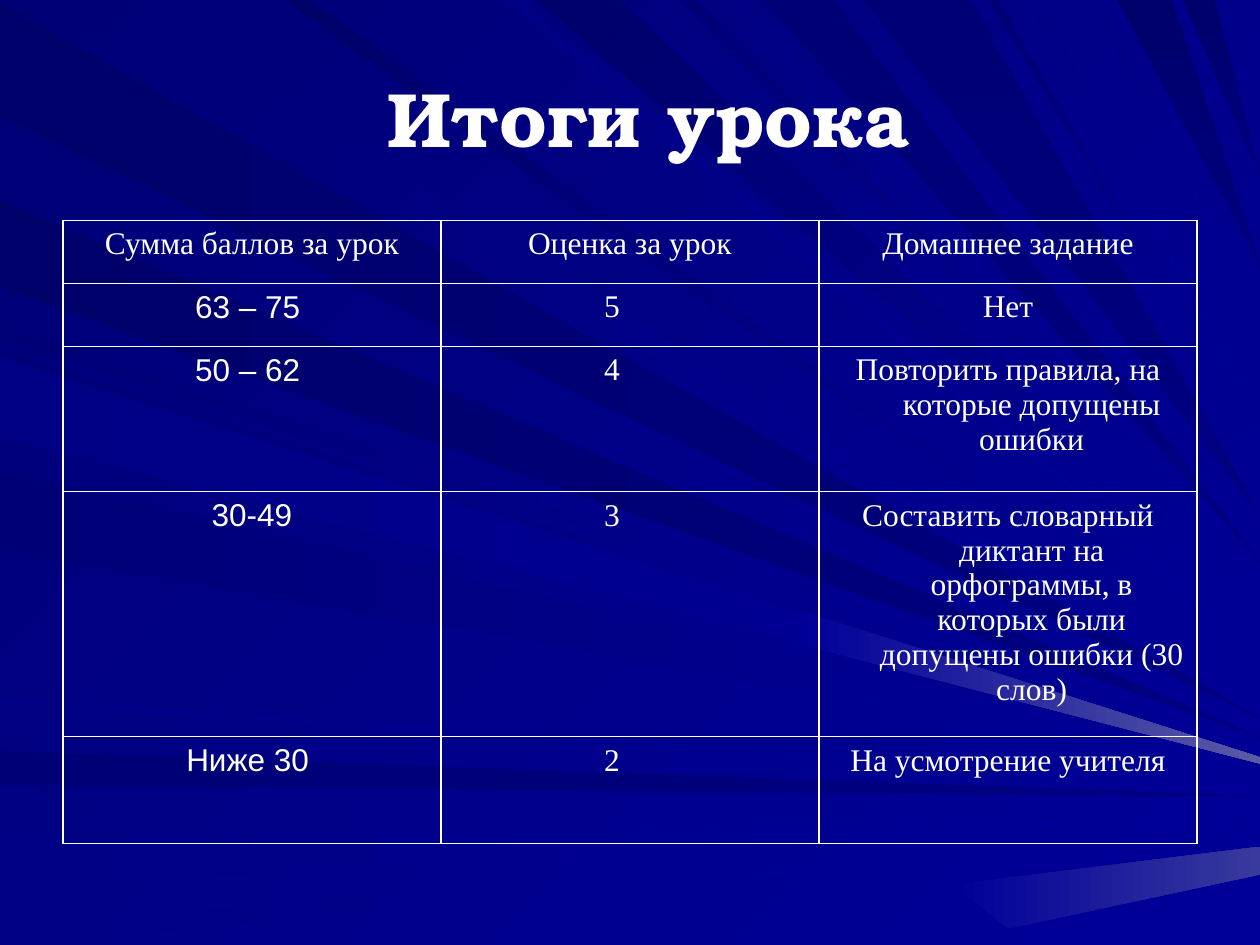
from lxml.etree import SubElement
from pptx import Presentation
from pptx.dml.color import RGBColor
from pptx.enum.text import MSO_ANCHOR, PP_ALIGN
from pptx.oxml.ns import qn
from pptx.util import Pt

COLORS = {
    "white": "FFFFFF",
    "deep": "00006B",
    "dark": "000076",
    "soft": "000085",
    "navy": "000080",
    "base": "000099",
    "haze": "5A5AA6",
    "mist": "39399E",
}
RAY_UNIT = Pt(0.72)
RIGHT_EDGE = 1000
RAYS = [
    ("left", "deep", "navy", 2, 93, 570),
    ("top", "dark", "base", 26, 101, 563),
    ("left", "dark", "navy", 596, 623, 632),
    ("left", "soft", "base", 665, 704, 648),
    ("left", "soft", "base", 735, 750, 662),
    ("left", "dark", "base", 258, 270, 589),
    ("left", "deep", "navy", 159, 228, 585),
    ("top", "soft", "base", 398, 416, 518),
    ("top", "deep", "base", 426, 492, 493),
    ("top", "dark", "base", 540, 552, 463),
    ("top", "dark", "navy", 606, 661, 446),
    ("top", "deep", "navy", 887, 930, 210),
    ("top", "deep", "navy", 939, 964, 140),
    ("left", "dark", "base", 278, 342, 600),
    ("left", "dark", "base", 374, 437, 606),
    ("left", "soft", "base", 552, 560, 622),
    ("top", "deep", "base", 225, 247, 550),
    ("top", "soft", "base", 577, 588, 454),
    ("top", "dark", "navy", 686, 770, 409),
    ("top", "dark", "base", 785, 792, 357),
    ("top", "soft", "base", 815, 824, 335),
    ("top", "soft", "base", 865, 872, 254),
    ("left", "soft", "base", 283, 347, 604),
]
GLOWS = [
    ("mist", [(1000, 694), (1000, 672), (756, 702), (800, 737)]),
    ("haze", [(1000, 601), (637, 485), (633, 511), (1000, 606)]),
]

ROW_HEIGHTS = [36, 36, 83, 140, 61]
COLUMN_WIDTH = 216
ROWS = [
    ("Сумма баллов за урок", "Оценка за урок", "Домашнее задание"),
    ("63 – 75 ", "5", "Нет"),
    ("50 – 62 ", "4", "Повторить правила, на которые допущены ошибки"),
    ("30-49", "3", "Составить словарный диктант на орфограммы, "
                   "в которых были допущены ошибки (30 слов)"),
    ("Ниже 30 ", "2", "На усмотрение учителя"),
]


def rgb(name):
    return RGBColor.from_string(COLORS[name])


def set_gradient(fill, start, end, angle):
    fill.gradient()
    fill.gradient_angle = (360 - angle) % 360
    for stop, name in zip(fill.gradient_stops, (start, end)):
        stop.color.rgb = rgb(name)


def style_text(p, font, size, bold=False):
    for r in p.runs:
        r.font.name = font
        r.font.size = Pt(size)
        r.font.bold = bold
        r.font.color.rgb = rgb("white")


def add_polygon(group, points, start, end, angle):
    builder = group.shapes.build_freeform(*points[0], scale=RAY_UNIT)
    builder.add_line_segments(points[1:], close=True)
    sp = builder.convert_to_shape()
    sp.shadow.inherit = False
    sp.line.fill.background()
    set_gradient(sp.fill, start, end, angle)


def add_rays(s):
    group = s.shapes.add_group_shape()
    for edge, start, end, first, last, tip in RAYS:
        if edge == "left":
            points, angle = [(0, first), (0, last)], 0
        else:
            points, angle = [(first, 0), (last, 0)], 90 if end == "navy" else 45
        add_polygon(group, points + [(RIGHT_EDGE, tip)], start, end, angle)
    for end, points in GLOWS:
        add_polygon(group, points, "base", end, 0)
    s.shapes._spTree.insert(2, group._element)


def add_title(s, text):
    sp = s.shapes.title
    sp.left, sp.top, sp.width, sp.height = Pt(36), Pt(21.6), Pt(648), Pt(90)
    tf = sp.text_frame
    tf.text = text
    tf.margin_left = Pt(29)
    tf.vertical_anchor = MSO_ANCHOR.MIDDLE
    p = tf.paragraphs[0]
    p.alignment = PP_ALIGN.CENTER
    style_text(p, "TeX Gyre Bonum", 44, bold=True)


def add_borders(cell):
    tcPr = cell._tc.get_or_add_tcPr()
    for side in ("lnL", "lnR", "lnT", "lnB"):
        ln = SubElement(tcPr, qn(f"a:{side}"), w=str(Pt(1)))
        fill = SubElement(ln, qn("a:solidFill"))
        SubElement(fill, qn("a:srgbClr"), val=COLORS["white"])


def fill_cell(cell, text, font, is_mark):
    add_borders(cell)
    cell.fill.background()
    cell.text = text
    p = cell.text_frame.paragraphs[0]
    p.alignment = PP_ALIGN.LEFT if is_mark else PP_ALIGN.CENTER
    pPr = p._p.get_or_add_pPr()
    pPr.set("marL", str(Pt(86 if is_mark else 27)))
    pPr.set("indent", str(Pt(0 if is_mark else -27)))
    style_text(p, font, 18)


def add_results_table(s):
    columns = len(ROWS[0])
    frame = s.shapes.add_table(len(ROWS), columns, Pt(36), Pt(126),
                               Pt(COLUMN_WIDTH * columns), Pt(sum(ROW_HEIGHTS)))
    table = frame.table
    table.first_row = False
    table.horz_banding = False
    for row, height in zip(table.rows, ROW_HEIGHTS):
        row.height = Pt(height)
    for i, texts in enumerate(ROWS):
        for j, text in enumerate(texts):
            font = "Arial" if i and j == 0 else "Times New Roman"
            fill_cell(table.cell(i, j), text, font, i > 0 and j == 1)


def main():
    prs = Presentation()
    prs.slide_width, prs.slide_height = Pt(720), Pt(540)
    s = prs.slides.add_slide(prs.slide_layouts[5])
    set_gradient(s.background.fill, "dark", "base", 45)
    add_rays(s)
    add_title(s, "Итоги урока")
    add_results_table(s)
    prs.save("out.pptx")


if __name__ == "__main__":
    main()
